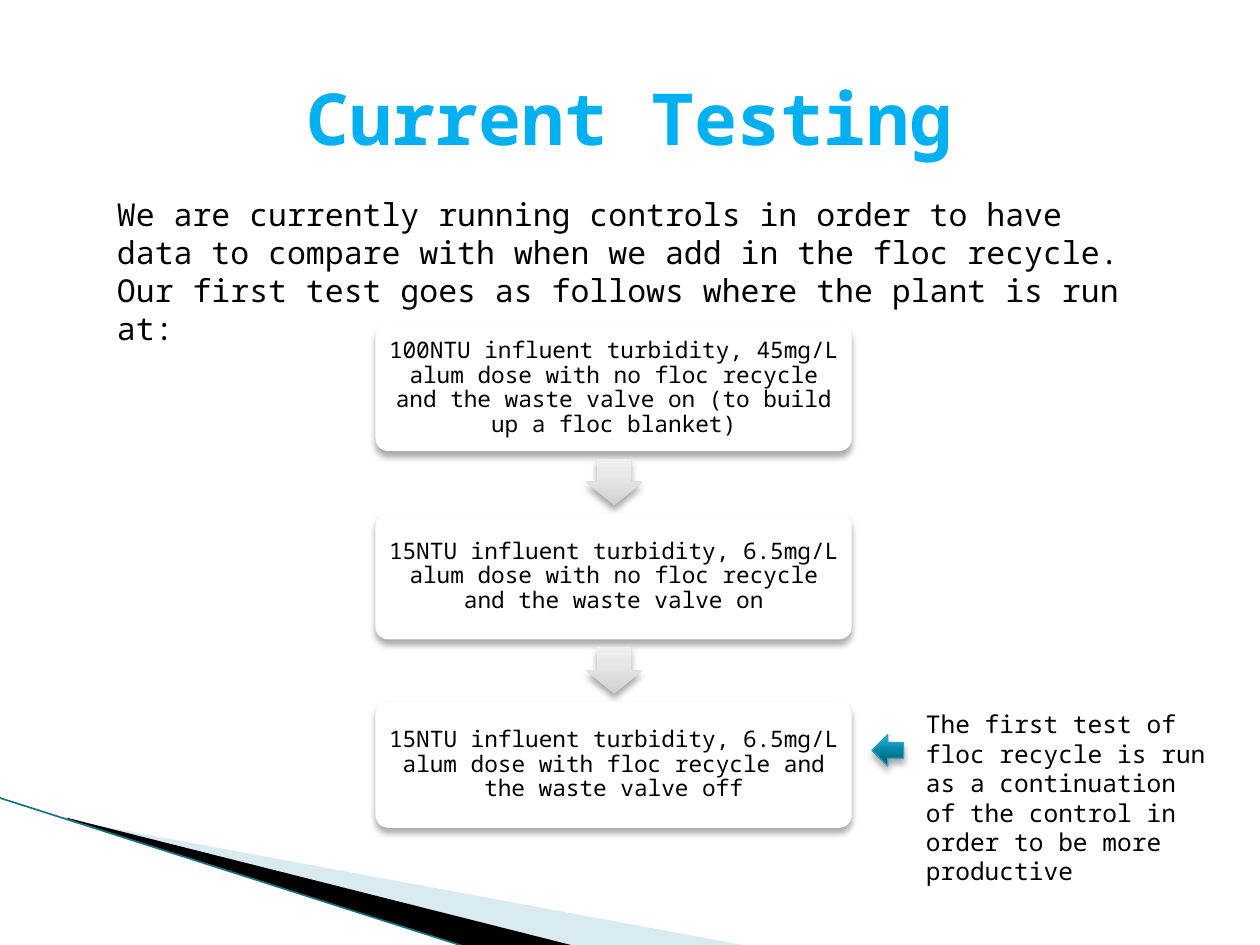
"""Build the "Current Testing" slide with a three-step flow of test runs."""
from lxml import etree
from pptx import Presentation
from pptx.dml.color import RGBColor
from pptx.enum.shapes import MSO_CONNECTOR, MSO_SHAPE
from pptx.enum.text import MSO_ANCHOR, PP_ALIGN
from pptx.oxml import parse_xml
from pptx.oxml.ns import nsdecls, qn
from pptx.util import Inches, Pt

STRAIGHT = MSO_CONNECTOR.STRAIGHT
ROUND, DOWN, LEFT = MSO_SHAPE.ROUNDED_RECTANGLE, MSO_SHAPE.DOWN_ARROW, MSO_SHAPE.LEFT_ARROW
TOP, MIDDLE = MSO_ANCHOR.TOP, MSO_ANCHOR.MIDDLE
START, CENTER = PP_ALIGN.LEFT, PP_ALIGN.CENTER

FONT = "Noto Sans Mono"
BLACK = RGBColor(0x00, 0x00, 0x00)
WHITE = RGBColor(0xFF, 0xFF, 0xFF)
SKY = RGBColor(0x00, 0xB0, 0xF0)
PALE = RGBColor(0xA0, 0xCB, 0xDC)
TEAL = RGBColor(0x1B, 0x70, 0x84)
AQUA = RGBColor(0x2D, 0xA2, 0xBF)
GREYS = [(0, RGBColor(0xD0, 0xD0, 0xD0)), (65, RGBColor(0xE8, 0xE8, 0xE8)),
         (100, RGBColor(0xEF, 0xEF, 0xEF))]
BLUES = [(0, RGBColor(0x00, 0x53, 0x67)), (50, RGBColor(0x00, 0x86, 0xA7)),
         (70, RGBColor(0x0E, 0x9A, 0xBE)), (100, RGBColor(0x2C, 0xB9, 0xE3))]

STEPS = [
    "100NTU influent turbidity, 45mg/L alum dose with no floc recycle and the waste valve on "
    "(to build up a floc blanket)",
    "15NTU influent turbidity, 6.5mg/L alum dose with no floc recycle and the waste valve on",
    "15NTU influent turbidity, 6.5mg/L alum dose with floc recycle and the waste valve off",
]
INTRO = ("We are currently running controls in order to have data to compare with when we add in "
         "the floc recycle. Our first test goes as follows where the plant is run at:")
NOTE = ("The first test of floc recycle is run as a continuation of the control in order to be "
        "more productive")


def write(shape, text, size, align=START, anchor=TOP, color=BLACK, bold=False):
    frame = shape.text_frame
    frame.word_wrap = True
    frame.vertical_anchor = anchor
    frame.text = text
    line = frame.paragraphs[0]
    line.alignment = align
    font = line.runs[0].font
    font.name, font.size, font.bold = FONT, Pt(size), bold
    font.color.rgb = color
    return frame


def add_block(kind, left, top, width, height, stops=None):
    shape = slide.shapes.add_shape(kind, Inches(left), Inches(top), Inches(width), Inches(height))
    shape.line.fill.background()
    shape.fill.solid()
    shape.fill.fore_color.rgb = WHITE
    props = shape._element.spPr
    if stops:
        marks = "".join(f'<a:gs pos="{pos * 1000}"><a:srgbClr val="{color}"/></a:gs>'
                        for pos, color in stops)
        props.replace(props.find(qn("a:solidFill")), parse_xml(
            f'<a:gradFill {nsdecls("a")}><a:gsLst>{marks}</a:gsLst>'
            '<a:lin ang="16200000" scaled="0"/></a:gradFill>'))
    shape.shadow.inherit = False
    props.find(qn("a:effectLst")).append(parse_xml(
        f'<a:outerShdw {nsdecls("a")} blurRad="{Pt(4)}" dist="{Pt(3)}" dir="5400000" '
        'rotWithShape="0"><a:srgbClr val="000000"><a:alpha val="35000"/></a:srgbClr>'
        '</a:outerShdw>'))
    return shape


deck = Presentation()
deck.slide_width, deck.slide_height = Inches(10), Inches(7.5)
slide = deck.slides.add_slide(deck.slide_layouts[6])

WEDGES = [
    (PALE, 40, [(0.55, 6.51), (5.95, 7.51), (4.56, 7.51), (0.55, 6.5)]),
    (BLACK, 100, [(0.53, 6.49), (4.57, 7.51), (3.72, 7.52), (0.54, 6.5)]),
]
for color, alpha, points in WEDGES:
    spots = [(Inches(x), Inches(y)) for x, y in points]
    path = slide.shapes.build_freeform(*spots[0])
    path.add_line_segments(spots[1:], close=True)
    wedge = path.convert_to_shape()
    wedge.shadow.inherit = False
    wedge.line.fill.background()
    wedge.fill.solid()
    wedge.fill.fore_color.rgb = color
    tint = wedge._element.spPr.find(qn("a:solidFill"))[0]
    etree.SubElement(tint, qn("a:alpha")).set("val", str(alpha * 1000))

edge = slide.shapes.add_connector(STRAIGHT, Inches(-0.01), Inches(6.33), Inches(3.71), Inches(7.52))
edge.line.color.rgb = TEAL
edge.line.width = Pt(0.95)
etree.SubElement(edge._element.spPr, qn("a:effectLst"))

for i, text in enumerate(STEPS):
    top = 2.58 + 1.495 * i
    step = add_block(ROUND, 2.98, top, 3.78, 1)
    step.adjustments[0] = 0.1
    frame = write(step, text, 13, CENTER, MIDDLE)
    frame.margin_left = frame.margin_right = Inches(0.05)
    frame.margin_top = frame.margin_bottom = Inches(0.05)
    frame.paragraphs[0].line_spacing = 0.9
    if i < len(STEPS) - 1:
        arrow = add_block(DOWN, 4.65, top + 1.06, 0.45, 0.37, GREYS)
        arrow.adjustments[0] = 0.6
        arrow.adjustments[1] = 0.5

LABELS = [
    ((0.5, 0.3, 9, 1.25), ("Current Testing", 41, CENTER, MIDDLE, SKY, True)),
    ((0.83, 1.5, 8.42, 1.01), (INTRO, 18)),
    ((7.25, 5.58, 2.42, 1.28), (NOTE, 14)),
]
for place, style in LABELS:
    write(slide.shapes.add_textbox(*map(Inches, place)), *style)

mark = add_block(LEFT, 6.92, 5.83, 0.25, 0.25, BLUES)
mark.line.color.rgb = AQUA
mark.line.width = Pt(0.75)

deck.save("out.pptx")
